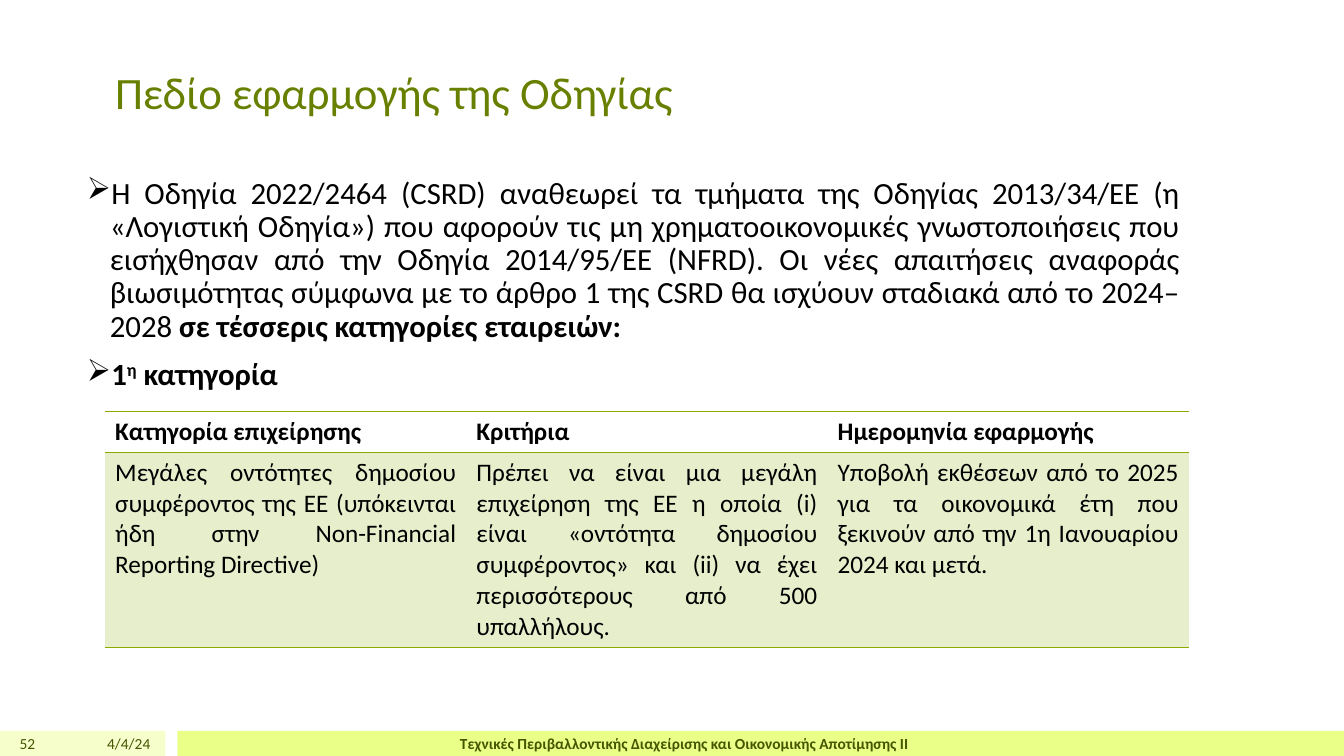
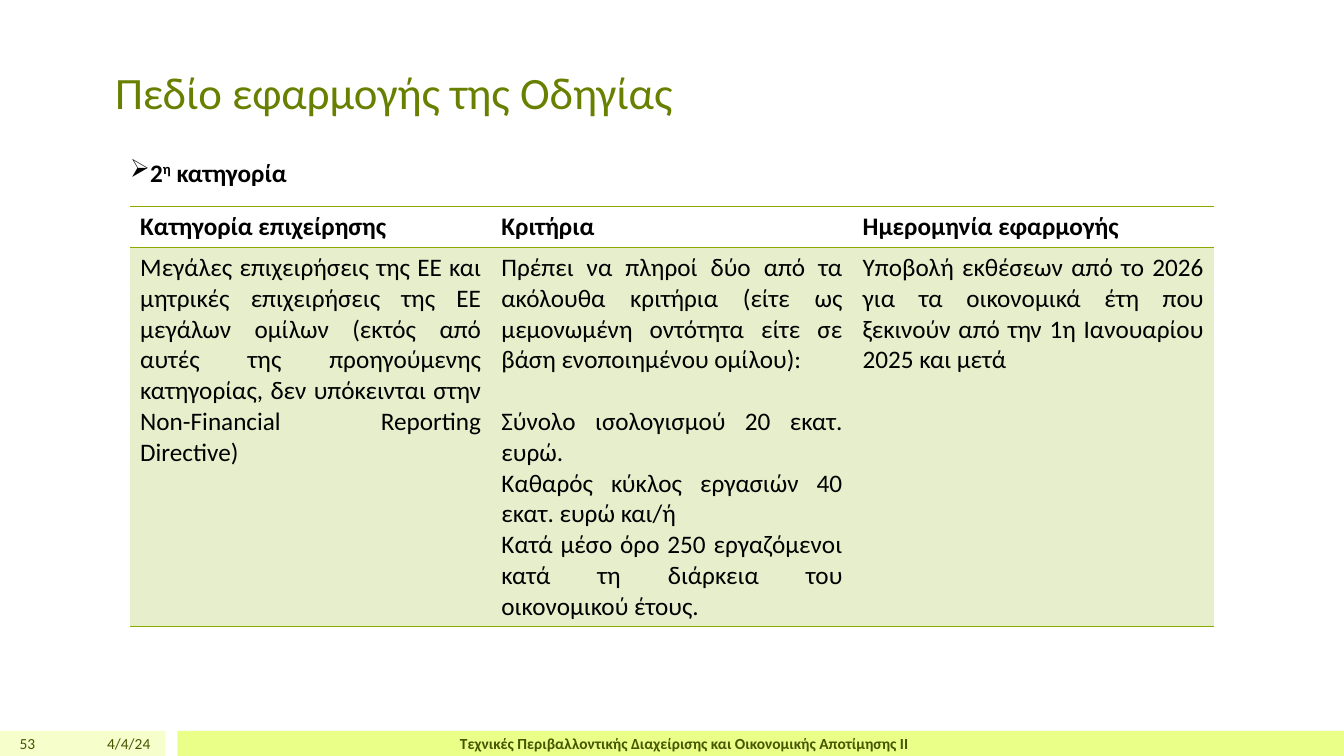
import lxml.etree
import pptx
import pptx.dml.color
import pptx.enum.shapes
import pptx.enum.text
import pptx.oxml.ns
import pptx.util

Cm = pptx.util.Cm
Pt = pptx.util.Pt
ALIGN = pptx.enum.text.PP_ALIGN
ANCHOR = pptx.enum.text.MSO_ANCHOR

FONT = "Calibri"
BULLET_FONT, ARROW = "Wingdings", "Ø"
BLACK = "000000"
TITLE_GREEN = "688000"
FOOTER_GREEN = "455500"
TABLE_GREEN = "8BAA00"
PALE_BAND = "F6FFCC"
BRIGHT_BAND = "E9FF88"

TITLE = "Πεδίο εφαρμογής της Οδηγίας"
COURSE = "Τεχνικές Περιβαλλοντικής Διαχείρισης και Οικονομικής Αποτίμησης ΙΙ"
DATE = "4/4/24"
HEADERS = ["Κατηγορία επιχείρησης", "Κριτήρια", "Ημερομηνία εφαρμογής"]

BAND_TOP, BAND_HEIGHT = 18.42, 0.63
TABLE_WIDTH, HEADER_HEIGHT = 27.31, 1.04
BLANK_LINE = 22


def color(value):
    return pptx.dml.color.RGBColor.from_string(value)


def add_xml(parent, tag, **attributes):
    return lxml.etree.SubElement(parent, pptx.oxml.ns.qn(tag), attributes)


class Slides:
    """Holds the deck, its style and the page being filled."""

    def __init__(self):
        self.deck = pptx.Presentation()
        self.deck.slide_width = Cm(33.87)
        self.deck.slide_height = Cm(19.05)
        self.page = None

    def new_page(self, number):
        """Add a page with the shared bands, footer and title."""
        self.page = self.deck.slides.add_slide(self.deck.slide_layouts[6])
        self.band(0, 4.17, PALE_BAND)
        self.band(4.47, 29.4, BRIGHT_BAND)
        self.footer(0, 1.14, str(number), ALIGN.RIGHT)
        self.footer(1.27, 2.77, DATE, ALIGN.RIGHT)
        self.footer(4.55, 25.4, COURSE, ALIGN.CENTER, bold=True)
        frame = self.box(2.65, 0.94, 28.04, 2.18, ANCHOR.BOTTOM)
        frame.text = TITLE
        self.style(frame.paragraphs[0], 32, TITLE_GREEN)

    def band(self, left, width, fill):
        shape = self.page.shapes.add_shape(
            pptx.enum.shapes.MSO_SHAPE.RECTANGLE,
            Cm(left), Cm(BAND_TOP), Cm(width), Cm(BAND_HEIGHT))
        shape.shadow.inherit = False
        shape.fill.solid()
        shape.fill.fore_color.rgb = color(fill)
        shape.line.fill.background()

    def box(self, left, top, width, height, anchor=ANCHOR.TOP):
        """Add a text box and return its text frame."""
        frame = self.page.shapes.add_textbox(
            Cm(left), Cm(top), Cm(width), Cm(height)).text_frame
        frame.word_wrap = True
        frame.vertical_anchor = anchor
        return frame

    def footer(self, left, width, text, align, bold=False):
        frame = self.box(left, BAND_TOP, width, BAND_HEIGHT, ANCHOR.MIDDLE)
        frame.text = text
        self.style(frame.paragraphs[0], 11, FOOTER_GREEN, align, bold)

    def style(self, para, size, ink, align=ALIGN.LEFT, bold=False):
        para.alignment = align
        for span in para.runs:
            span.font.name = FONT
            span.font.size = Pt(size)
            span.font.bold = bold
            span.font.color.rgb = color(ink)

    def bullet(self, para, size, indent=0):
        """Justify the paragraph and give it an arrow bullet."""
        self.style(para, size, BLACK, ALIGN.JUSTIFY)
        properties = para._p.get_or_add_pPr()
        properties.set("marL", str(Cm(indent)))
        properties.set("indent", str(-Cm(indent)))
        add_xml(properties, "a:buFont", typeface=BULLET_FONT, charset="2")
        add_xml(properties, "a:buChar", char=ARROW)

    def category(self, para, number, size, indent=0):
        """Write a bold bulleted ordinal with a raised ending."""
        for text in (number, "η", " κατηγορία"):
            para.add_run().text = text
        self.bullet(para, size, indent)
        for span in para.runs:
            span.font.bold = True
        para.runs[1].font._element.set("baseline", "30000")

    def table(self, left, top, body_height, body):
        rows = [HEADERS, body]
        table = self.page.shapes.add_table(
            len(rows), len(HEADERS), Cm(left), Cm(top), Cm(TABLE_WIDTH),
            Cm(HEADER_HEIGHT + body_height)).table
        table.first_row = table.horz_banding = False
        table.rows[0].height = Cm(HEADER_HEIGHT)
        table.rows[1].height = Cm(body_height)
        for column in table.columns:
            column.width = Cm(TABLE_WIDTH / len(HEADERS))
        for row, texts in enumerate(rows):
            for column, text in enumerate(texts):
                self.cell(table.cell(row, column), text, is_header=row == 0)
        return table

    def cell(self, cell, text, is_header):
        cell.text = text
        for para in cell.text_frame.paragraphs:
            self.style(para, 18, BLACK, ALIGN.JUSTIFY, is_header)
        self.borders(cell)
        if is_header:
            cell.fill.background()
            return
        cell.fill.solid()
        cell.fill.fore_color.rgb = color(TABLE_GREEN)
        fill = cell._tc.tcPr.find(pptx.oxml.ns.qn("a:solidFill"))
        add_xml(fill[0], "a:alpha", val="20000")

    def borders(self, cell):
        """Rule the cell above and below, with open sides."""
        properties = cell._tc.get_or_add_tcPr()
        for side in ("L", "R"):
            add_xml(add_xml(properties, "a:ln" + side), "a:noFill")
        for side in ("T", "B"):
            line = add_xml(properties, "a:ln" + side, w=str(Pt(1)))
            add_xml(add_xml(line, "a:solidFill"), "a:srgbClr", val=TABLE_GREEN)


def first_category(slides):
    slides.new_page(52)
    frame = slides.box(1.94, 4.35, 28.04, 12.83)
    intro = frame.paragraphs[0]
    intro.text = (
        "Η Οδηγία 2022/2464 (CSRD) αναθεωρεί τα τμήματα της Οδηγίας "
        "2013/34/ΕΕ (η «Λογιστική Οδηγία») που αφορούν τις μη "
        "χρηματοοικονομικές γνωστοποιήσεις που εισήχθησαν από την Οδηγία "
        "2014/95/ΕΕ (NFRD). Οι νέες απαιτήσεις αναφοράς βιωσιμότητας "
        "σύμφωνα με το άρθρο 1 της CSRD θα ισχύουν σταδιακά από το "
        "2024–2028 ")
    intro.add_run().text = "σε τέσσερις κατηγορίες εταιρειών:"
    heading = frame.add_paragraph()
    for para in (intro, heading):
        para.line_spacing = 0.9
        para.space_before = Pt(11)
    slides.bullet(intro, 22, 0.58)
    intro.runs[1].font.bold = True
    slides.category(heading, "1", 22, 0.58)
    slides.table(2.65, 10.36, 4.91, [
        "Μεγάλες οντότητες δημοσίου συμφέροντος της ΕΕ (υπόκεινται ήδη στην "
        "Non-Financial Reporting Directive)",
        "Πρέπει να είναι μια μεγάλη επιχείρηση της ΕΕ η οποία (i) είναι "
        "«οντότητα δημοσίου συμφέροντος» και (ii) να έχει περισσότερους από "
        "500 υπαλλήλους.",
        "Υποβολή εκθέσεων από το 2025 για τα οικονομικά έτη που ξεκινούν "
        "από την 1η Ιανουαρίου 2024 και μετά."])


def second_category(slides):
    slides.new_page(53)
    table = slides.table(3.28, 5.2, 9.55, [
        "Μεγάλες επιχειρήσεις της ΕΕ και μητρικές επιχειρήσεις της ΕΕ "
        "μεγάλων ομίλων (εκτός από αυτές της προηγούμενης κατηγορίας, δεν "
        "υπόκεινται στην Non-Financial Reporting Directive)",
        "Πρέπει να πληροί δύο από τα ακόλουθα κριτήρια (είτε ως μεμονωμένη "
        "οντότητα είτε σε βάση ενοποιημένου ομίλου):\n"
        "Σύνολο ισολογισμού 20 εκατ. ευρώ.\n"
        "Καθαρός κύκλος εργασιών 40 εκατ. ευρώ και/ή\n"
        "Κατά μέσο όρο 250 εργαζόμενοι κατά τη διάρκεια του οικονομικού "
        "έτους.",
        "Υποβολή εκθέσεων από το 2026 για τα οικονομικά έτη που ξεκινούν "
        "από την 1η Ιανουαρίου 2025 και μετά"])
    criteria = table.cell(1, 1).text_frame
    criteria.paragraphs[1].space_before = Pt(BLANK_LINE)
    heading = slides.box(3.03, 3.83, 16.94, 1.02).paragraphs[0]
    slides.category(heading, "2", 18)


def main():
    slides = Slides()
    first_category(slides)
    second_category(slides)
    slides.deck.save("out.pptx")


if __name__ == "__main__":
    main()
